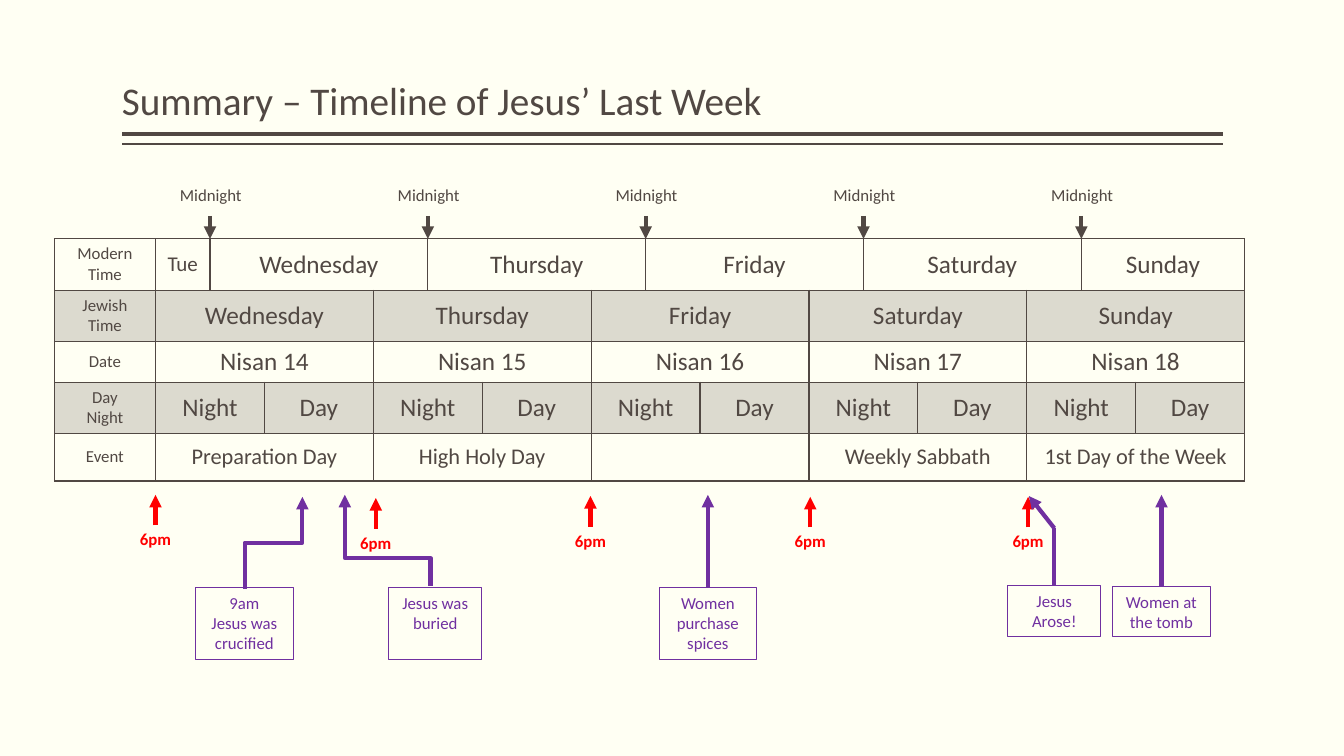
from lxml import etree
from pptx import Presentation
from pptx import util as u
from pptx.dml.color import RGBColor
from pptx.enum import shapes, text
from pptx.oxml import ns

CREAM = RGBColor(0xFF, 0xFF, 0xF3)
BROWN = RGBColor(0x51, 0x48, 0x43)
RED = RGBColor(0xFF, 0x00, 0x00)
PURPLE = RGBColor(0x70, 0x30, 0xA0)

TABLE_LEFT, TABLE_TOP = 1.37, 6.02
LABEL_WIDTH, DAY_WIDTH = 2.55, 5.49
CENTER = text.PP_ALIGN.CENTER

deck = Presentation()
deck.slide_width, deck.slide_height = u.Cm(33.87), u.Cm(19.05)
page = deck.slides.add_slide(deck.slide_layouts[6])
page.background.fill.solid()
page.background.fill.fore_color.rgb = CREAM


def write(frame, words, size, color, align=CENTER, bold=False):
    frame.word_wrap = True
    frame.text = words
    for para in frame.paragraphs:
        para.alignment = align
        for span in para.runs:
            span.font.name, span.font.size = "Calibri", u.Pt(size)
            span.font.bold, span.font.color.rgb = bold, color


def draw_line(x1, y1, x2, y2, color, width=3, arrow=True,
              kind=shapes.MSO_CONNECTOR.STRAIGHT):
    line = page.shapes.add_connector(kind, *map(u.Cm, (x1, y1, x2, y2)))
    line.line.color.rgb, line.line.width = color, u.Pt(width)
    if arrow:
        etree.SubElement(line.line._get_or_add_ln(), ns.qn("a:tailEnd"), type="triangle")
    etree.SubElement(line._element.spPr, ns.qn("a:effectLst"))
    return line


# Title with its double rule
for y, width in ((3.38, 3), (3.63, 1)):
    draw_line(30.81, y, 3.07, y, BROWN, width, arrow=False)
title = page.shapes.add_textbox(u.Cm(3.07), u.Cm(0.2), u.Cm(27.74), u.Cm(3.05))
write(title.text_frame, "Summary – Timeline of Jesus’ Last Week", 28, BROWN,
      text.PP_ALIGN.LEFT)
title.text_frame.margin_left = title.text_frame.margin_right = 0
title.text_frame.vertical_anchor = text.MSO_ANCHOR.BOTTOM
title.text_frame.paragraphs[0].line_spacing = 0.9

# Timeline rows: label, height, shaded, text size, entries as (words, columns spanned)
days = ["Wednesday", "Thursday", "Friday", "Saturday", "Sunday"]
events = ["Preparation Day", "High Holy Day", "", "Weekly Sabbath", "1st Day of the Week"]
rows = [
    ("Modern\nTime", 1.29, False, 18,
     [("Tue", 1)] + [(day, 3) for day in days[:-1]] + [(days[-1], 2)]),
    ("Jewish\nTime", 1.29, True, 18, [(day, 3) for day in days]),
    ("Date", 1.03, False, 18, [(f"Nisan {14 + i}", 3) for i in range(5)]),
    ("Day\nNight", 1.29, True, 18, [("Night", 2), ("Day", 1)] * 5),
    ("Event", 1.2, False, 16, [(event, 3) for event in events]),
]
column_widths = [LABEL_WIDTH] + [DAY_WIDTH / 4, DAY_WIDTH / 4, DAY_WIDTH / 2] * 5
table = page.shapes.add_table(
    len(rows), len(column_widths), u.Cm(TABLE_LEFT), u.Cm(TABLE_TOP),
    u.Cm(sum(column_widths)), u.Cm(sum(row[1] for row in rows))).table
table.first_row = table.horz_banding = False
for column, width in zip(table.columns, column_widths):
    column.width = u.Cm(width)

for r, (label, height, shaded, size, entries) in enumerate(rows):
    table.rows[r].height = u.Cm(height)

    # Borders and fill
    for cell in table.rows[r].cells:
        properties = cell._tc.get_or_add_tcPr()
        for side in ("a:lnL", "a:lnR", "a:lnT", "a:lnB"):
            border = etree.SubElement(properties, ns.qn(side), w=str(u.Pt(1)))
            paint = etree.SubElement(border, ns.qn("a:solidFill"))
            etree.SubElement(paint, ns.qn("a:srgbClr"), val=str(BROWN))
        if shaded:
            cell.fill.solid()
            cell.fill.fore_color.rgb = BROWN
            shade = properties.find(ns.qn("a:solidFill"))[0]
            etree.SubElement(shade, ns.qn("a:alpha"), val="20000")
        else:
            cell.fill.background()

    # Merged entries
    c = 0
    for words, columns in [(label, 1)] + entries:
        cell = table.cell(r, c)
        if columns > 1:
            cell.merge(table.cell(r, c + columns - 1))
        text_size = 12 if c == 0 else 15 if words == "Tue" else size
        write(cell.text_frame, words, text_size, BROWN)
        cell.vertical_anchor = text.MSO_ANCHOR.MIDDLE
        c += columns

# Midnight marks, a quarter of the way into each Jewish day
for i in range(5):
    x = TABLE_LEFT + LABEL_WIDTH + DAY_WIDTH * (i + 0.25)
    box = page.shapes.add_textbox(u.Cm(x - 1.15), u.Cm(4.52), u.Cm(2.34), u.Cm(0.76))
    write(box.text_frame, "Midnight", 12, BROWN)
    draw_line(x, 5.44, x, TABLE_TOP, BROWN)

# 6pm marks at each sunset
for x, tip in ((3.92, 12.47), (14.88, 12.5), (20.42, 12.52), (25.91, 12.52), (9.47, 12.55)):
    box = page.shapes.add_shape(shapes.MSO_SHAPE.RECTANGLE, u.Cm(x - 1.17),
                                u.Cm(tip + 0.74), u.Cm(2.34), u.Cm(0.76))
    box.shadow.inherit = False
    box.fill.solid()
    box.fill.fore_color.rgb = CREAM
    box.line.fill.background()
    write(box.text_frame, "6pm", 12, RED, bold=True)
    box.text_frame.vertical_anchor = text.MSO_ANCHOR.TOP
    draw_line(x, tip + 0.77, x, tip, RED)

# Event boxes
event_boxes = {}
for name, words, left, top, width, height in (
        ("tomb", "Women at the tomb", 28.04, 14.78, 2.46, 1.27),
        ("spices", "Women purchase spices", 16.61, 14.81, 2.46, 1.8),
        ("arose", "Jesus Arose!", 25.4, 14.76, 2.34, 1.27),
        ("crucified", "9am\nJesus was crucified", 4.93, 14.81, 2.46, 1.8),
        ("buried", "Jesus was buried", 9.8, 14.81, 2.34, 1.8)):
    box = page.shapes.add_shape(shapes.MSO_SHAPE.RECTANGLE,
                                *map(u.Cm, (left, top, width, height)))
    box.shadow.inherit = False
    box.fill.background()
    box.line.color.rgb, box.line.width = PURPLE, u.Pt(0.75)
    write(box.text_frame, words, 12, PURPLE)
    box.text_frame.vertical_anchor = text.MSO_ANCHOR.TOP
    event_boxes[name] = box

# Straight arrows from the event boxes
for name, x, top in (("tomb", 29.27, 14.78), ("spices", 17.84, 14.81)):
    draw_line(x, top, x, 12.47, PURPLE).begin_connect(event_boxes[name], 0)
draw_line(26.57, 13.31, 25.93, 12.5, PURPLE)
stem = draw_line(26.57, 13.31, 26.57, 14.76, PURPLE, arrow=False)
stem.end_connect(event_boxes["arose"], 0)

# Elbow arrows, laid out sideways and then turned to point up
for x1, y1, x2, y2, bend in ((6.17, 14.83, 7.62, 12.52, 50000),
                             (10.85, 14.76, 8.69, 12.47, 30300)):
    middle_x, middle_y = (x1 + x2) / 2, (y1 + y2) / 2
    run, rise = x2 - x1, y1 - y2
    elbow = draw_line(middle_x - rise / 2, middle_y - run / 2,
                      middle_x + rise / 2, middle_y + run / 2,
                      PURPLE, kind=shapes.MSO_CONNECTOR.ELBOW)
    outline = elbow._element.spPr
    outline.find(ns.qn("a:xfrm")).set("rot", str(270 * 60000))
    guides = outline.find(ns.qn("a:prstGeom")).find(ns.qn("a:avLst"))
    etree.SubElement(guides, ns.qn("a:gd"), name="adj1", fmla=f"val {bend}")

deck.save("out.pptx")
